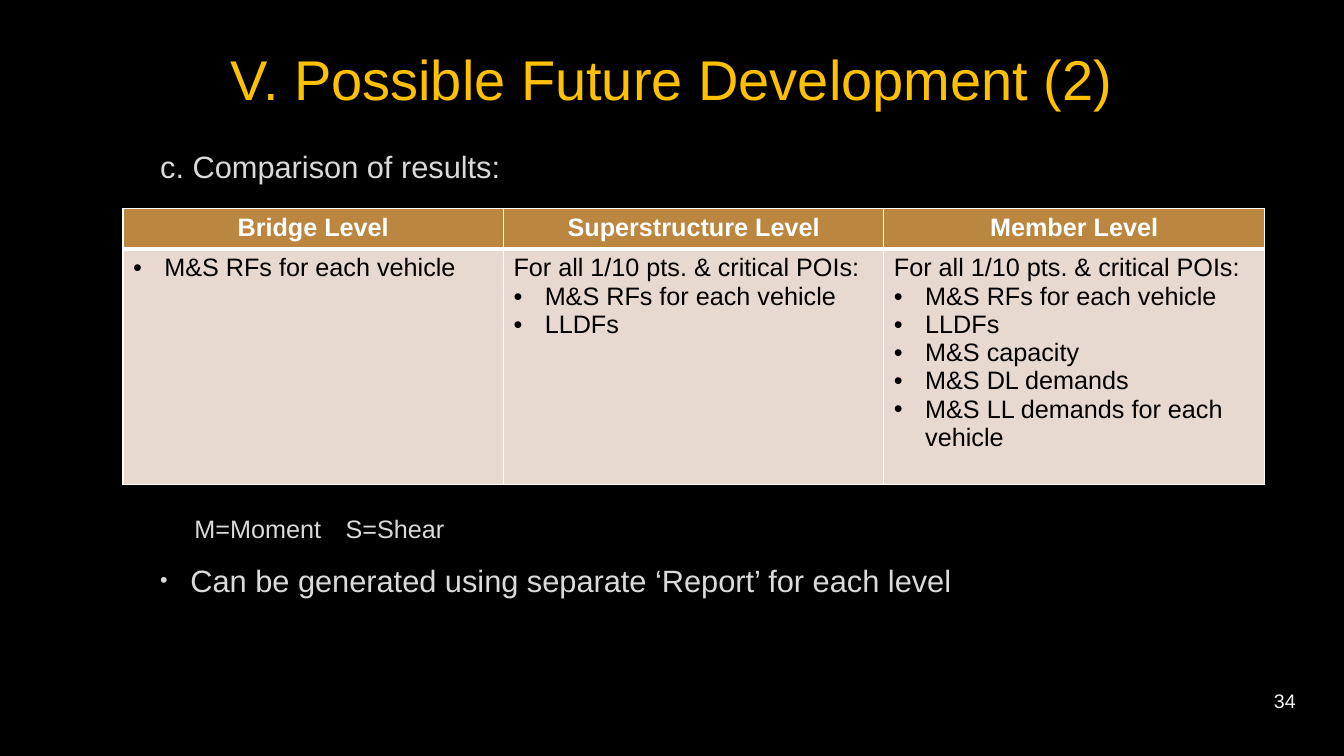
from dataclasses import dataclass

from lxml import etree
from pptx import Presentation, util as u
from pptx.dml.color import RGBColor
from pptx.enum import text
from pptx.oxml import ns


@dataclass(frozen=True)
class Theme:
    """Colours, font and type sizes of the slide."""
    font: str = "Arial"
    back: str = "000000"
    title: str = "FFC000"
    body: str = "DADADA"
    number: str = "F2F2F2"
    header: str = "BB8640"
    cell: str = "E7D9CF"
    white: str = "FFFFFF"
    black: str = "000000"
    title_pt: int = 40
    body_pt: int = 22
    small_pt: int = 18
    number_pt: int = 14


THEME = Theme()
LEVELS = {
    "Bridge Level": (None, ["M&S RFs for each vehicle"]),
    "Superstructure Level": ("For all 1/10 pts. & critical POIs:",
                             ["M&S RFs for each vehicle", "LLDFs"]),
    "Member Level": ("For all 1/10 pts. & critical POIs:",
                     ["M&S RFs for each vehicle", "LLDFs", "M&S capacity",
                      "M&S DL demands", "M&S LL demands for each vehicle"]),
}


def child(parent, tag, **attrs):
    """Append a drawing element and return it."""
    return etree.SubElement(parent, ns.qn(tag), attrs)


def style(p, size, color, bold=False, align=None):
    """Format every run of a paragraph."""
    p.alignment = align
    for r in p.runs:
        r.font.name, r.font.size, r.font.bold = THEME.font, u.Pt(size), bold
        r.font.color.rgb = RGBColor.from_string(color)


def indent(p, left, hang=0.0):
    """Set the left margin and hanging indent of a paragraph."""
    pPr = p._p.get_or_add_pPr()
    pPr.set("marL", str(u.Inches(left)))
    pPr.set("indent", str(u.Inches(-hang)))
    return pPr


def bullet(p, left, hang, color, percent=100):
    """Give a paragraph a round bullet."""
    pPr = indent(p, left, hang)
    child(child(pPr, "a:buClr"), "a:srgbClr", val=color)
    child(pPr, "a:buSzPct", val=str(percent * 1000))
    child(pPr, "a:buFont", typeface=THEME.font)
    child(pPr, "a:buChar", char="•")


def text_box(s, box, anchor=text.MSO_ANCHOR.TOP):
    """Add a wrapping text box and return its frame."""
    tf = s.shapes.add_textbox(*map(u.Inches, box)).text_frame
    tf.word_wrap = True
    tf.vertical_anchor = anchor
    return tf


def line_box(s, box, words, size, color, align):
    """Add one line of text centred vertically in its box."""
    tf = text_box(s, box, text.MSO_ANCHOR.MIDDLE)
    tf.text = words
    style(tf.paragraphs[0], size, color, align=align)


def heading(s, box):
    """Add the heading above the table."""
    tf = text_box(s, box)
    tf.text = "c. Comparison of results:"
    indent(tf.paragraphs[0], 0.49)
    style(tf.paragraphs[0], THEME.body_pt, THEME.body)


def notes(s, box):
    """Add the key and the closing point below the table."""
    tf = text_box(s, box)
    tf.text = "M=Moment\tS=Shear"
    key, point = tf.paragraphs[0], tf.add_paragraph()
    tabs = child(indent(key, 0.83), "a:tabLst")
    child(tabs, "a:tab", pos=str(u.Inches(2.29)), algn="l")
    style(key, THEME.small_pt, THEME.body)
    point.text = "Can be generated using separate ‘Report’ for each level"
    point.space_before = u.Pt(13)
    bullet(point, 0.79, 0.3, THEME.body, 70)
    style(point, THEME.body_pt, THEME.body)


def paint(cell, fill, top, bottom):
    """Draw the white borders of a cell and fill it."""
    tcPr = cell._tc.get_or_add_tcPr()
    for side, width in (("L", 1), ("R", 1), ("T", top), ("B", bottom)):
        ln = child(tcPr, f"a:ln{side}", w=str(u.Pt(width)))
        child(child(ln, "a:solidFill"), "a:srgbClr", val=THEME.white)
    cell.fill.solid()
    cell.fill.fore_color.rgb = RGBColor.from_string(fill)


def level_table(s, box, header_height):
    """Add the table that compares the levels."""
    table = s.shapes.add_table(2, len(LEVELS), *map(u.Inches, box)).table
    table.rows[0].height = u.Inches(header_height)
    table.rows[1].height = u.Inches(box[3] - header_height)
    for i, (name, (intro, items)) in enumerate(LEVELS.items()):
        head, body = table.cell(0, i), table.cell(1, i)
        paint(head, THEME.header, 1, 3)
        paint(body, THEME.cell, 3, 1)
        head.text = name
        style(head.text_frame.paragraphs[0], THEME.small_pt, THEME.white, True,
              text.PP_ALIGN.CENTER)
        body.text = "\n".join(([intro] if intro else []) + items)
        for p in body.text_frame.paragraphs:
            if p.text != intro:
                bullet(p, 0.31, 0.31, THEME.black)
            style(p, THEME.small_pt, THEME.black)


def comparison_slide(prs):
    """Build the slide comparing the results by level."""
    s = prs.slides.add_slide(prs.slide_layouts[6])
    s.background.fill.solid()
    s.background.fill.fore_color.rgb = RGBColor.from_string(THEME.back)
    line_box(s, (1, 0.25, 11.32, 1.06), "V. Possible Future Development (2)",
             THEME.title_pt, THEME.title, text.PP_ALIGN.CENTER)
    heading(s, (1, 1.42, 11.32, 0.5))
    level_table(s, (1.22, 2.07, 11.32, 2.72), 0.38)
    notes(s, (1, 5.04, 11.32, 1.2))
    line_box(s, (12.13, 6.75, 0.82, 0.4), "34", THEME.number_pt, THEME.number,
             text.PP_ALIGN.RIGHT)


def main():
    """Create and save the presentation."""
    prs = Presentation()
    prs.slide_width, prs.slide_height = u.Inches(13.33), u.Inches(7.5)
    comparison_slide(prs)
    prs.save("out.pptx")


if __name__ == "__main__":
    main()
